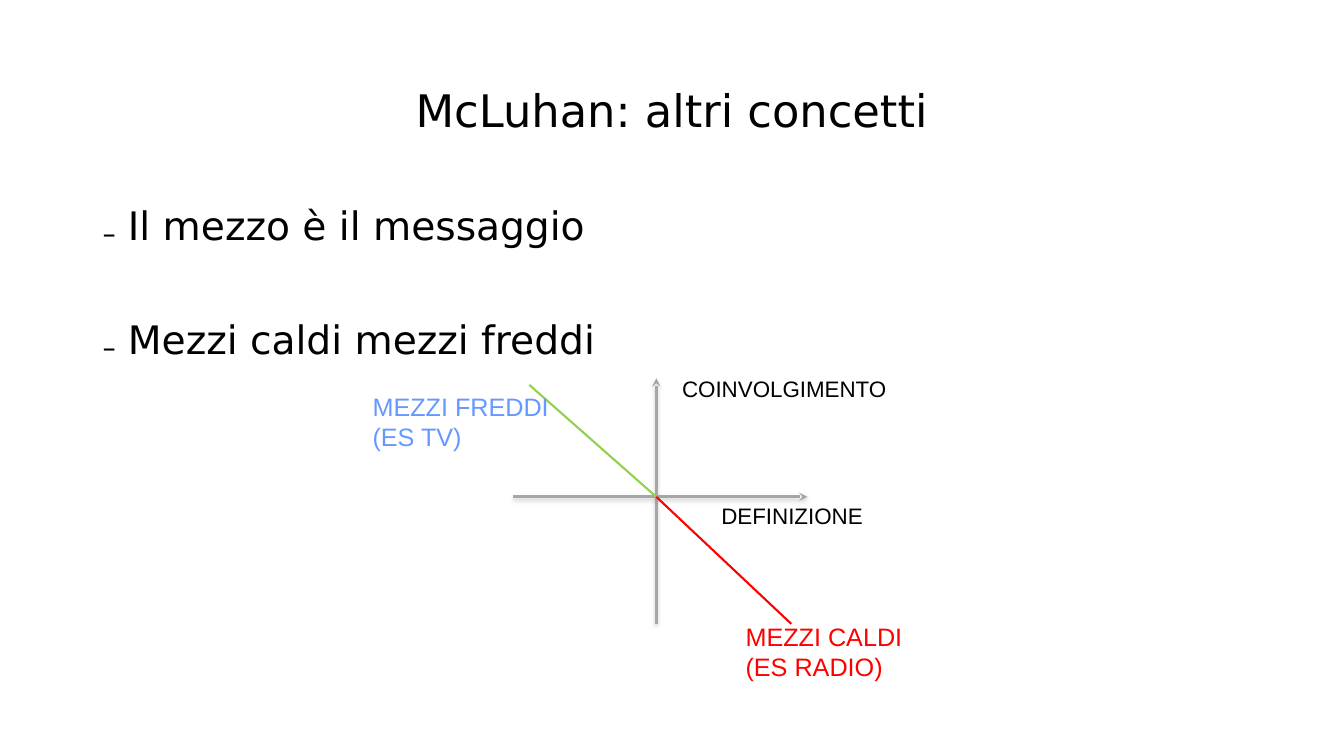
from pptx import Presentation
from pptx.dml.color import RGBColor
from pptx.enum.shapes import MSO_CONNECTOR
from pptx.enum.text import MSO_ANCHOR, MSO_AUTO_SIZE, PP_ALIGN
from pptx.oxml import parse_xml
from pptx.oxml.ns import nsdecls
from pptx.util import Cm, Pt

# Content
COLORS = {"text": "000000", "axis": "A6A6A6", "shadow": "808080",
          "cold_line": "92D050", "cold_text": "6699FF", "hot": "FF0000"}
TITLE = "McLuhan: altri concetti"
BULLETS = ["Il mezzo è il messaggio", "Mezzi caldi mezzi freddi"]

# Lengths in cm
TITLE_BOX = (2.33, 1.01, 29.21, 3.68)
BODY_BOX = (2.33, 5.08, 29.21, 12.95)
ORIGIN_X, ORIGIN_Y = 16.54, 12.52
AXES = [((ORIGIN_X, 15.72), (ORIGIN_X, 9.53)),
        ((12.93, ORIGIN_Y), (20.35, ORIGIN_Y))]
MEDIA_LINES = [((13.34, 9.7), (ORIGIN_X, ORIGIN_Y), "cold_line"),
               ((ORIGIN_X, ORIGIN_Y), (19.94, 15.72), "hot")]
LABELS = [("COINVOLGIMENTO", (16.94, 9.32, 6.4, 0.94), 16, "text"),
          ("DEFINIZIONE", (17.93, 12.52, 6.4, 0.94), 16, "text"),
          ("MEZZI CALDI (ES RADIO)", (18.54, 15.52, 5.21, 1.8), 18, "hot"),
          ("MEZZI FREDDI (ES TV)", (9.14, 9.73, 5.21, 1.8), 18, "cold_text")]


def rgb(name):
    return RGBColor.from_string(COLORS[name])


def place(s, box):
    for attr, value in zip(("left", "top", "width", "height"), box):
        setattr(s, attr, Cm(value))


def set_font(p, size, name, color="text"):
    for attr, value in {"size": Pt(size), "name": name}.items():
        for r in p.runs:
            setattr(r.font, attr, value)
    for r in p.runs:
        r.font.color.rgb = rgb(color)


def add_line(start, end, color, width, axis=False):
    s = slide.shapes.add_connector(MSO_CONNECTOR.STRAIGHT,
                                   *(Cm(v) for v in start + end))
    s.line.color.rgb = rgb(color)
    s.line.width = Pt(width)
    shadow = ""
    if axis:
        s.line._get_or_add_ln().append(
            parse_xml(f'<a:tailEnd {nsdecls("a")} type="stealth"/>'))
        shadow = (f'<a:outerShdw blurRad="{Pt(3.1)}" dist="{Pt(1.6)}" dir="5400000" '
                  f'rotWithShape="0"><a:srgbClr val="{COLORS["shadow"]}">'
                  '<a:alpha val="38000"/></a:srgbClr></a:outerShdw>')
    s._element.spPr.append(
        parse_xml(f'<a:effectLst {nsdecls("a")}>{shadow}</a:effectLst>'))


prs = Presentation()
prs.slide_width, prs.slide_height = Cm(33.87), Cm(19.05)
slide = prs.slides.add_slide(prs.slide_layouts[1])

# Title
title = slide.shapes.title
place(title, TITLE_BOX)
title.text_frame.text = TITLE
title.text_frame.vertical_anchor = MSO_ANCHOR.MIDDLE
p = title.text_frame.paragraphs[0]
p.alignment = PP_ALIGN.CENTER
p.line_spacing = 0.9
set_font(p, 32, "DejaVu Sans")

# Bullet list
body = slide.placeholders[1]
place(body, BODY_BOX)
tf = body.text_frame
tf.text = "\n".join(BULLETS)
for i, p in enumerate(tf.paragraphs):
    pPr = p._p.get_or_add_pPr()
    pPr.set("marL", str(Cm(0.64)))
    pPr.set("indent", str(-Cm(0.64)))
    for xml in (f'<a:buClr {nsdecls("a")}><a:srgbClr val="{COLORS["text"]}"/></a:buClr>',
                f'<a:buChar {nsdecls("a")} char="₋"/>'):
        pPr.append(parse_xml(xml))
    p.line_spacing = 0.9
    p.space_before = Pt(51 if i else 0)
    set_font(p, 28, "DejaVu Sans")

# Axes and media lines
for start, end in AXES:
    add_line(start, end, "axis", 2, axis=True)
for start, end, color in MEDIA_LINES:
    add_line(start, end, color, 1.5)

# Diagram labels
for text, box, size, color in LABELS:
    s = slide.shapes.add_textbox(*(Cm(v) for v in box))
    tf = s.text_frame
    tf.word_wrap = True
    tf.auto_size = MSO_AUTO_SIZE.SHAPE_TO_FIT_TEXT
    tf.text = text
    set_font(tf.paragraphs[0], size, "Arial", color)

prs.save("out.pptx")
